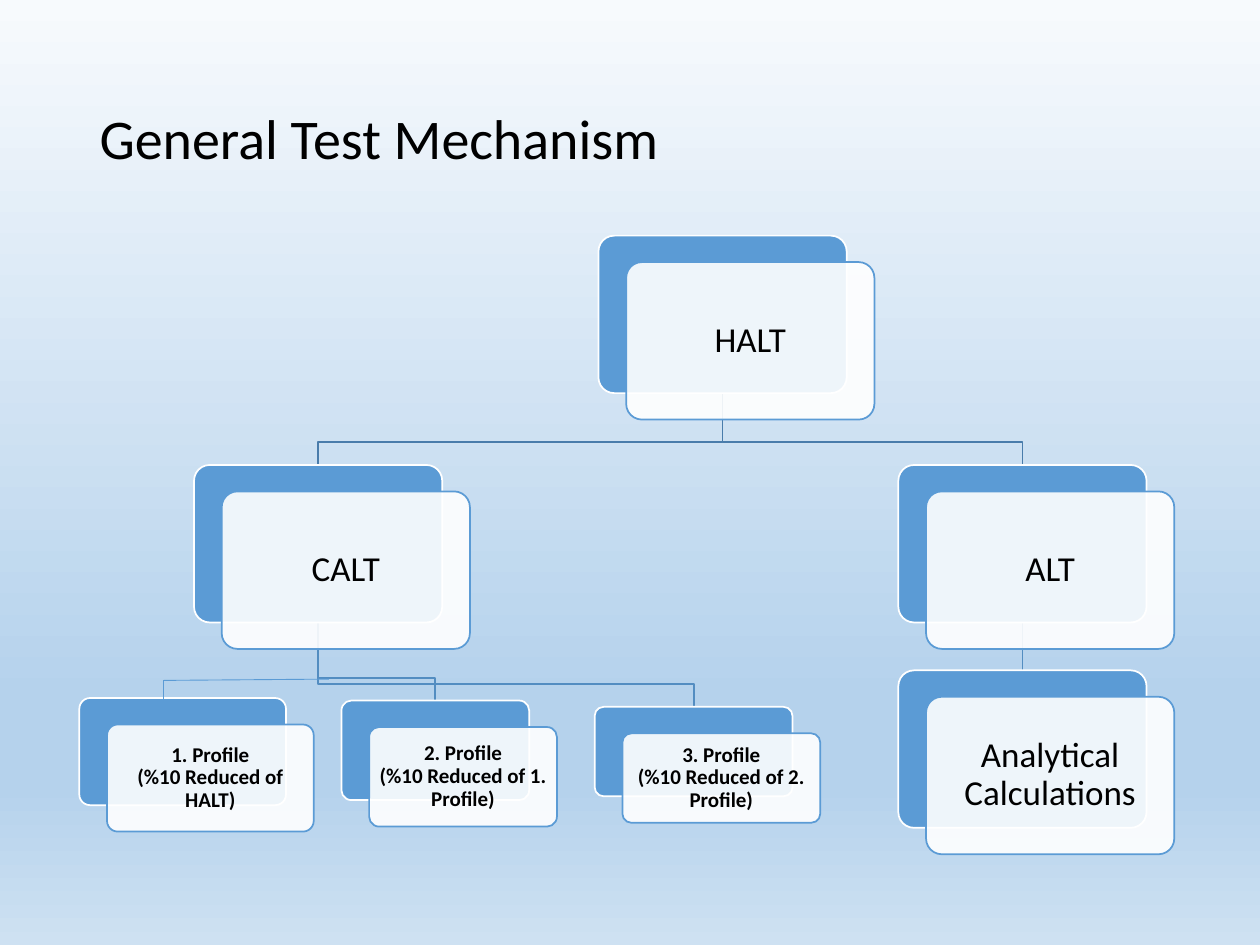
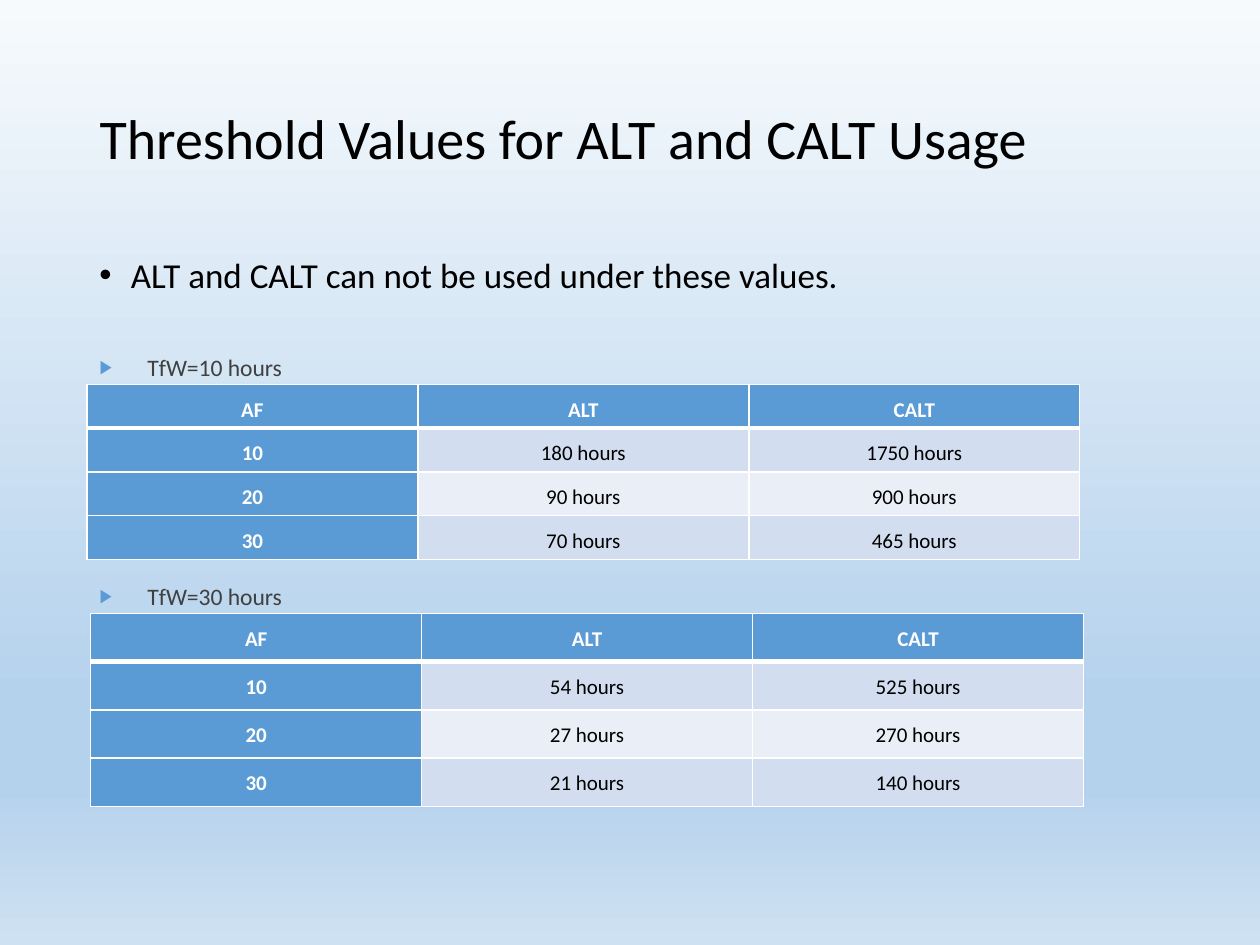
from lxml import etree
from pptx import Presentation
from pptx.dml.color import RGBColor
from pptx.enum.shapes import MSO_CONNECTOR, MSO_SHAPE
from pptx.enum.text import MSO_ANCHOR, PP_ALIGN
from pptx.oxml.ns import qn
from pptx.util import Inches, Pt

LEFT, CENTER = PP_ALIGN.LEFT, PP_ALIGN.CENTER
TOP, MIDDLE = MSO_ANCHOR.TOP, MSO_ANCHOR.MIDDLE
ROUNDED, STRAIGHT = MSO_SHAPE.ROUNDED_RECTANGLE, MSO_CONNECTOR.STRAIGHT

FONT = "Calibri"
BLUE, WHITE, BLACK, GREY = "5B9BD5", "FFFFFF", "000000", "404040"
LINK_TOP, LINK_LOW = "497CAB", "538DC1"
BANDS = ("D2DEEF", "EAEFF7")
BACKGROUND = ((0, "F7FAFD"), (74, "B5D2EC"), (83, "B5D2EC"), (100, "CEE1F2"))
TITLE_BOX = (0.69, 0.4, 8.62, 1.45)


# Shared helpers
def rgb(color):
    return RGBColor.from_string(color)


def inches(*values):
    return [Inches(v) for v in values]


def add_xml(parent, tag, **attrs):
    return etree.SubElement(parent, qn(tag), attrs)


def write(tf, text, size=12, color=BLACK, bold=False, align=LEFT, anchor=TOP,
          spacing=0.9, before=0, margins=(0.1, 0.05)):
    tf.word_wrap = True
    tf.vertical_anchor = anchor
    tf.margin_left = tf.margin_right = Inches(margins[0])
    tf.margin_top = tf.margin_bottom = Inches(margins[1])
    p = tf.paragraphs[0]
    p.text = text
    p.alignment, p.line_spacing, p.space_before = align, spacing, Pt(before)
    for r in p.runs:
        r.font.name, r.font.size, r.font.bold = FONT, Pt(size), bold
        r.font.color.rgb = rgb(color)
    return p


def add_bullet(p, char, indent, color=BLACK, percent=100):
    pPr = p._p.get_or_add_pPr()
    pPr.set("marL", str(Inches(indent)))
    pPr.set("indent", str(-Inches(indent)))
    add_xml(add_xml(pPr, "a:buClr"), "a:srgbClr", val=color)
    add_xml(pPr, "a:buSzPct", val=str(percent * 1000))
    add_xml(pPr, "a:buFont", typeface="Arial")
    add_xml(pPr, "a:buChar", char=char)


def add_slide(prs, title):
    slide = prs.slides.add_slide(prs.slide_layouts[5])
    fill = slide.background.fill
    fill.gradient()
    fill.gradient_angle = 270
    stops = fill._fill._gradFill.find(qn("a:gsLst"))
    for stop in list(stops):
        stops.remove(stop)
    for pos, color in BACKGROUND:
        add_xml(add_xml(stops, "a:gs", pos=str(pos * 1000)), "a:srgbClr", val=color)
    sp = slide.shapes.title
    sp.left, sp.top, sp.width, sp.height = inches(*TITLE_BOX)
    write(sp.text_frame, title, size=32, anchor=MIDDLE)
    return slide


# Test hierarchy
def add_card(slide, x, y, w, h, text, size=20, bold=False, margin=0.08):
    """Blue card with a translucent labelled card in front of it."""
    cards = []
    for dx, dy, fill, line in ((0, 0, BLUE, WHITE), (0.22, 0.21, WHITE, BLUE)):
        sp = slide.shapes.add_shape(ROUNDED, *inches(x + dx, y + dy, w, h))
        sp.adjustments[0] = 0.1
        sp.shadow.inherit = False
        sp.fill.solid()
        sp.fill.fore_color.rgb = rgb(fill)
        sp.line.color.rgb = rgb(line)
        sp.line.width = Pt(1)
        cards.append(sp)
    back, front = cards
    color = front.fill._xPr.find(qn("a:solidFill"))[0]
    add_xml(color, "a:alpha", val="90000")
    write(front.text_frame, text, size=size, bold=bold, align=CENTER,
          anchor=MIDDLE, margins=(margin, margin))
    return back


def add_line(slide, start, end, color=BLUE, width=0.5):
    line = slide.shapes.add_connector(STRAIGHT, *inches(*start, *end))
    line.line.color.rgb = rgb(color)
    line.line.width = Pt(width)
    add_xml(line._element.spPr, "a:effectLst")
    return line


def send_to_back(slide, sp):
    slide.shapes._spTree.insert(2, sp._element)


def add_elbow(slide, parent, child, color):
    """Bent line that turns just above the child card."""
    x1, y1 = parent.left + parent.width // 2, parent.top + parent.height
    x2, y2 = child.left + child.width // 2, child.top
    bend = y2 - Inches(0.18)
    builder = slide.shapes.build_freeform(x1, y1)
    builder.add_line_segments([(x1, bend), (x2, bend), (x2, y2)], close=False)
    sp = builder.convert_to_shape()
    sp.shadow.inherit = False
    sp.fill.background()
    sp.line.color.rgb = rgb(color)
    sp.line.width = Pt(1)
    send_to_back(slide, sp)


def hierarchy_slide(prs):
    slide = add_slide(prs, "General Test Mechanism")
    w, h = 1.97, 1.25
    halt = add_card(slide, 4.75, 1.87, w, h, "HALT")
    calt = add_card(slide, 1.54, 3.69, w, h, "CALT")
    alt = add_card(slide, 7.13, 3.69, w, h, "ALT")
    analysis = add_card(slide, 7.13, 5.32, w, h, "Analytical Calculations")

    boxes = ((0.63, 5.54, 1.64, 0.85), (2.71, 5.56, 1.49, 0.79), (4.72, 5.61, 1.57, 0.71))
    sources = ("HALT", "1. Profile", "2. Profile")
    profiles = [
        add_card(slide, *box, f"{n}. Profile\n(%10 Reduced of {source})",
                 size=12, bold=True, margin=0.05)
        for n, (box, source) in enumerate(zip(boxes, sources), 1)
    ]

    # Links behind the cards
    for child in (calt, alt):
        add_elbow(slide, halt, child, LINK_TOP)
    for child in profiles[1:]:
        add_elbow(slide, calt, child, LINK_LOW)
    link = add_line(slide, (8.11, 4.94), (8.11, 5.32), LINK_LOW, 1)
    link.begin_connect(alt, 2)
    link.end_connect(analysis, 0)
    send_to_back(slide, link)

    # Thin link to the first profile
    corner = (1.3, 5.4)
    add_line(slide, (2.61, 5.39), corner)
    add_line(slide, corner, (1.3, 5.6))


# Threshold tables
def set_borders(cell, **widths):
    tcPr = cell._tc.get_or_add_tcPr()
    for side in "LRTB":
        ln = add_xml(tcPr, f"a:ln{side}", w=str(Pt(widths.get(side, 1))))
        add_xml(add_xml(ln, "a:solidFill"), "a:srgbClr", val=WHITE)


def add_threshold_table(slide, x, y, w, h, rows):
    table = slide.shapes.add_table(len(rows), len(rows[0]), *inches(x, y, w, h)).table
    for i, row in enumerate(rows):
        for j, text in enumerate(row):
            cell = table.cell(i, j)
            heading = i == 0 or j == 0
            set_borders(cell, B=3 if i == 0 else 1, T=3 if i == 1 else 1)
            cell.fill.solid()
            cell.fill.fore_color.rgb = rgb(BLUE if heading else BANDS[(i - 1) % 2])
            write(cell.text_frame, text, color=WHITE if heading else BLACK,
                  bold=heading, align=CENTER, spacing=1.5)
            cell.margin_left = cell.margin_right = Inches(0.06)
            cell.margin_top = cell.margin_bottom = 0
            cell.vertical_anchor = TOP


def add_threshold_block(slide, x, y, w, h, label, rows):
    """Table with its bulleted label above."""
    sp = slide.shapes.add_textbox(*inches(0.72, y - 0.29, 7.05, 0.35))
    p = write(sp.text_frame, label, size=13.5, color=GREY, spacing=1.0,
              before=10, margins=(0.07, 0.04))
    add_bullet(p, "▶", 0.38, BLUE, 80)
    add_threshold_table(slide, x, y, w, h, rows)


def threshold_slide(prs):
    slide = add_slide(prs, "Threshold Values for ALT and CALT Usage")
    sp = slide.shapes.add_textbox(*inches(0.69, 2, 8.62, 0.6))
    p = write(sp.text_frame, "ALT and CALT can not be used under these values.",
              size=20, before=10)
    add_bullet(p, "•", 0.25)

    header = ("AF", "ALT", "CALT")
    add_threshold_block(slide, 0.69, 3.05, 7.88, 1.39, "TfW=10 hours", [
        header,
        ("10", "180 hours", "1750 hours"),
        ("20", "90 hours", "900 hours"),
        ("30", "70 hours", "465 hours"),
    ])
    add_threshold_block(slide, 0.72, 4.87, 7.88, 1.53, "TfW=30 hours", [
        header,
        ("10", "54 hours", "525 hours"),
        ("20", "27 hours", "270 hours"),
        ("30", "21 hours", "140 hours"),
    ])


def main():
    prs = Presentation()
    prs.slide_width, prs.slide_height = inches(10, 7.5)
    hierarchy_slide(prs)
    threshold_slide(prs)
    prs.save("out.pptx")


if __name__ == "__main__":
    main()
